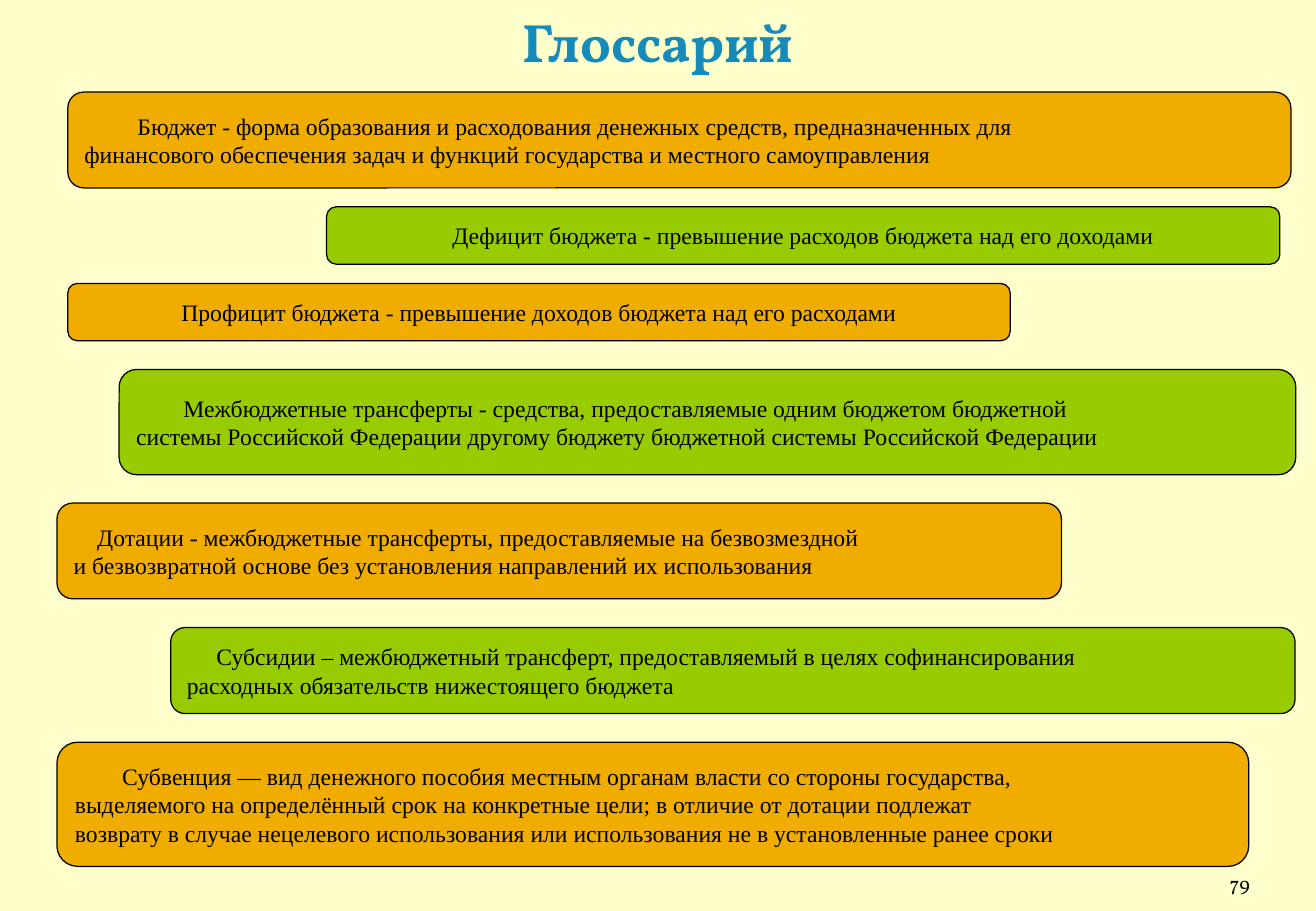
from pptx import Presentation
from pptx.dml.color import RGBColor
from pptx.enum.shapes import MSO_SHAPE
from pptx.enum.text import MSO_ANCHOR, PP_ALIGN
from pptx.util import Pt

COLORS = {
    "background": "FFFFCC",
    "title": "168BBA",
    "orange": "F0AD00",
    "green": "99CC00",
    "black": "000000",
}
TITLE = "Глоссарий"
PAGE_NUMBER = "79"
CARD_FILLS = ["orange", "green"]
# left, top, width, height, first-line indent, lines
CARDS = [
    (40.2, 54.6, 725, 56.8, 31.5, [
        "Бюджет - форма образования и расходования денежных средств, предназначенных для",
        "финансового обеспечения задач и функций государства и местного самоуправления"]),
    (193.6, 122.6, 565, 34, 0, [
        "Дефицит бюджета - превышение расходов бюджета над его доходами"]),
    (40.2, 168, 558.6, 34, 0, [
        "Профицит бюджета - превышение доходов бюджета над его расходами"]),
    (70.6, 219, 697.4, 62.4, 28, [
        "Межбюджетные трансферты - средства, предоставляемые одним бюджетом бюджетной",
        "системы Российской Федерации другому бюджету бюджетной системы Российской Федерации"]),
    (33.8, 298.2, 595.4, 56.8, 14, [
        "Дотации - межбюджетные трансферты, предоставляемые на безвозмездной",
        "и безвозвратной основе без установления направлений их использования"]),
    (101.2, 372, 666.4, 51, 17.5, [
        "Субсидии – межбюджетный трансферт, предоставляемый в целях софинансирования",
        "расходных обязательств нижестоящего бюджета"]),
    (33.8, 440, 706.4, 73.6, 28, [
        "Субвенция — вид денежного пособия местным органам власти со стороны государства,",
        "выделяемого на определённый срок на конкретные цели; в отличие от дотации подлежат",
        "возврату в случае нецелевого использования или использования не в установленные ранее сроки"]),
]


def color(name):
    return RGBColor.from_string(COLORS[name])


def write_text(shape, lines, size=14, font="Times New Roman", fill="black", bold=False,
               align=PP_ALIGN.CENTER, anchor=MSO_ANCHOR.MIDDLE, indent=0, side_inset=7.2):
    frame = shape.text_frame
    frame.word_wrap = True
    frame.vertical_anchor = anchor
    frame.margin_left = frame.margin_right = Pt(side_inset)
    frame.text = "\n".join(lines)
    for paragraph in frame.paragraphs:
        paragraph.alignment = align
        paragraph.font.size = Pt(size)
        paragraph.font.name = font
        paragraph.font.bold = bold
        paragraph.font.color.rgb = color(fill)
    if indent:
        properties = frame.paragraphs[0]._p.get_or_add_pPr()
        properties.set("marL", "0")
        properties.set("indent", str(int(Pt(indent))))


def add_card(slide, box, fill, lines, indent):
    shape = slide.shapes.add_shape(MSO_SHAPE.ROUNDED_RECTANGLE, *map(Pt, box))
    shape.shadow.inherit = False
    shape.fill.solid()
    shape.fill.fore_color.rgb = color(fill)
    shape.line.color.rgb = color("black")
    shape.line.width = Pt(0.75)
    align = PP_ALIGN.JUSTIFY if len(lines) > 1 else PP_ALIGN.CENTER
    write_text(shape, lines, align=align, indent=indent)


def main():
    """Build the budget glossary slide."""
    presentation = Presentation()
    presentation.slide_width, presentation.slide_height = Pt(780), Pt(540)
    slide = presentation.slides.add_slide(presentation.slide_layouts[6])
    slide.background.fill.solid()
    slide.background.fill.fore_color.rgb = color("background")

    number = slide.shapes.add_textbox(Pt(676), Pt(505.4), Pt(64.8), Pt(28.8))
    write_text(number, [PAGE_NUMBER], size=12, font="Vollkorn", align=PP_ALIGN.RIGHT,
               anchor=MSO_ANCHOR.BOTTOM, side_inset=0)
    title = slide.shapes.add_textbox(Pt(39), Pt(0), Pt(702), Pt(49))
    write_text(title, [TITLE], size=32, font="Vollkorn", fill="title", bold=True)

    for index, (*box, indent, lines) in enumerate(CARDS):
        add_card(slide, box, CARD_FILLS[index % len(CARD_FILLS)], lines, indent)
    presentation.save("out.pptx")


if __name__ == "__main__":
    main()
